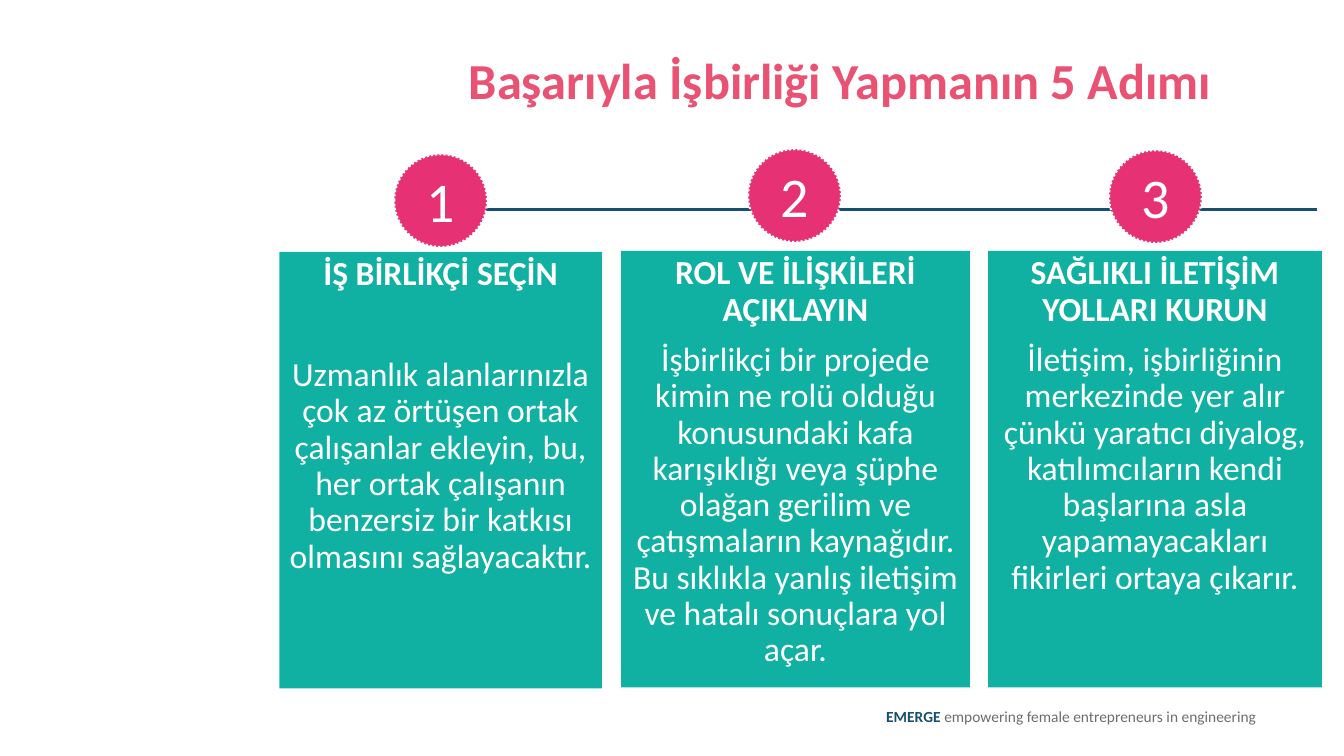
from lxml import etree
from pptx import Presentation
from pptx.dml.color import RGBColor
from pptx.enum.dml import MSO_LINE
from pptx.enum.shapes import MSO_CONNECTOR, MSO_SHAPE
from pptx.enum.text import MSO_ANCHOR, PP_ALIGN
from pptx.oxml.ns import qn
from pptx.util import Inches, Pt

LEFT, CENTER, RIGHT = PP_ALIGN.LEFT, PP_ALIGN.CENTER, PP_ALIGN.RIGHT
TOP, MIDDLE = MSO_ANCHOR.TOP, MSO_ANCHOR.MIDDLE
RECTANGLE, OVAL = MSO_SHAPE.RECTANGLE, MSO_SHAPE.OVAL

FONT = "Calibri"
COLORS = {"title": "E95273", "card": "10B1A2", "badge": "E63275",
          "navy": "174F72", "gray": "6D6E6C", "white": "FFFFFF"}

TITLE = "Başarıyla İşbirliği Yapmanın 5 Adımı"
FOOTER = [("EMERGE ", "navy", True),
          ("empowering female entrepreneurs in engineering", "gray", False)]
STEPS = [
    {"heading": "İŞ BİRLİKÇİ SEÇİN",
     "body": "Uzmanlık alanlarınızla çok az örtüşen ortak çalışanlar ekleyin, bu, "
             "her ortak çalışanın benzersiz bir katkısı olmasını sağlayacaktır.",
     "card": (2.77, 2.5, 3.2), "badge": (3.91, 1.53), "gap": 46},
    {"heading": "ROL VE İLİŞKİLERİ AÇIKLAYIN",
     "body": "İşbirlikçi bir projede kimin ne rolü olduğu konusundaki kafa karışıklığı "
             "veya şüphe olağan gerilim ve çatışmaların kaynağıdır. Bu sıklıkla yanlış "
             "iletişim ve hatalı sonuçlara yol açar.",
     "card": (6.16, 2.49, 3.46), "badge": (7.42, 1.48), "gap": 10},
    {"heading": "SAĞLIKLI İLETİŞİM YOLLARI KURUN",
     "body": "İletişim, işbirliğinin merkezinde yer alır çünkü yaratıcı diyalog, "
             "katılımcıların kendi başlarına asla yapamayacakları fikirleri ortaya çıkarır.",
     "card": (9.8, 2.49, 3.31), "badge": (11, 1.49), "gap": 10},
]
CARD_HEIGHT = 4.33
BADGE_SIZE = 0.92
TIMELINE = {"start": 4.12, "end": 13.06, "y": 2.08}


def color(name):
    return RGBColor.from_string(COLORS[name])


def write(paragraph, runs, size, align=CENTER, spacing=1.0, before=0):
    """Fill a paragraph with (text, color name, bold) runs."""
    paragraph.alignment = align
    paragraph.line_spacing = spacing
    paragraph.space_before = Pt(before)
    for text, color_name, bold in runs:
        run = paragraph.add_run()
        run.text = text
        run.font.name = FONT
        run.font.size = Pt(size)
        run.font.bold = bold
        run.font.color.rgb = color(color_name)


def prepare_frame(shape, anchor=TOP):
    frame = shape.text_frame
    frame.word_wrap = True
    frame.vertical_anchor = anchor
    return frame


def add_filled(slide, kind, box, fill):
    shape = slide.shapes.add_shape(kind, *map(Inches, box))
    shape.shadow.inherit = False
    shape.fill.solid()
    shape.fill.fore_color.rgb = color(fill)
    shape.line.fill.background()
    return shape


def add_timeline(slide):
    y = Inches(TIMELINE["y"])
    line = slide.shapes.add_connector(MSO_CONNECTOR.STRAIGHT, Inches(TIMELINE["start"]), y,
                                      Inches(TIMELINE["end"]), y)
    line.line.color.rgb = color("navy")
    line.line.width = Pt(2.25)
    etree.SubElement(line._element.spPr, qn("a:effectLst"))


def add_card(slide, step):
    card = add_filled(slide, RECTANGLE, (*step["card"], CARD_HEIGHT), "card")
    frame = prepare_frame(card)
    write(frame.paragraphs[0], [(step["heading"], "white", True)], 24, spacing=0.9)
    write(frame.add_paragraph(), [(step["body"], "white", False)], 24,
          spacing=0.9, before=step["gap"])


def add_badge(slide, step, number):
    badge = add_filled(slide, OVAL, (*step["badge"], BADGE_SIZE, BADGE_SIZE), "badge")
    badge.line.color.rgb = color("white")
    badge.line.width = Pt(1.5)
    badge.line.dash_style = MSO_LINE.ROUND_DOT
    frame = prepare_frame(badge, MIDDLE)
    write(frame.paragraphs[0], [(str(number), "white", False)], 40)


def main():
    presentation = Presentation()
    presentation.slide_width = Inches(13.33)
    presentation.slide_height = Inches(7.5)
    slide = presentation.slides.add_slide(presentation.slide_layouts[5])

    title = slide.shapes.title
    title.left, title.top, title.width, title.height = map(Inches, (4.55, 0.51, 8.1, 0.76))
    write(prepare_frame(title).paragraphs[0], [(TITLE, "title", True)], 36,
          align=LEFT, spacing=0.9)

    footer = slide.shapes.add_textbox(*map(Inches, (0.31, 6.97, 12.25, 0.45)))
    write(prepare_frame(footer).paragraphs[0], FOOTER, 11, align=RIGHT)

    add_timeline(slide)
    for number, step in enumerate(STEPS, start=1):
        add_card(slide, step)
        add_badge(slide, step, number)
    presentation.save("out.pptx")


if __name__ == "__main__":
    main()
